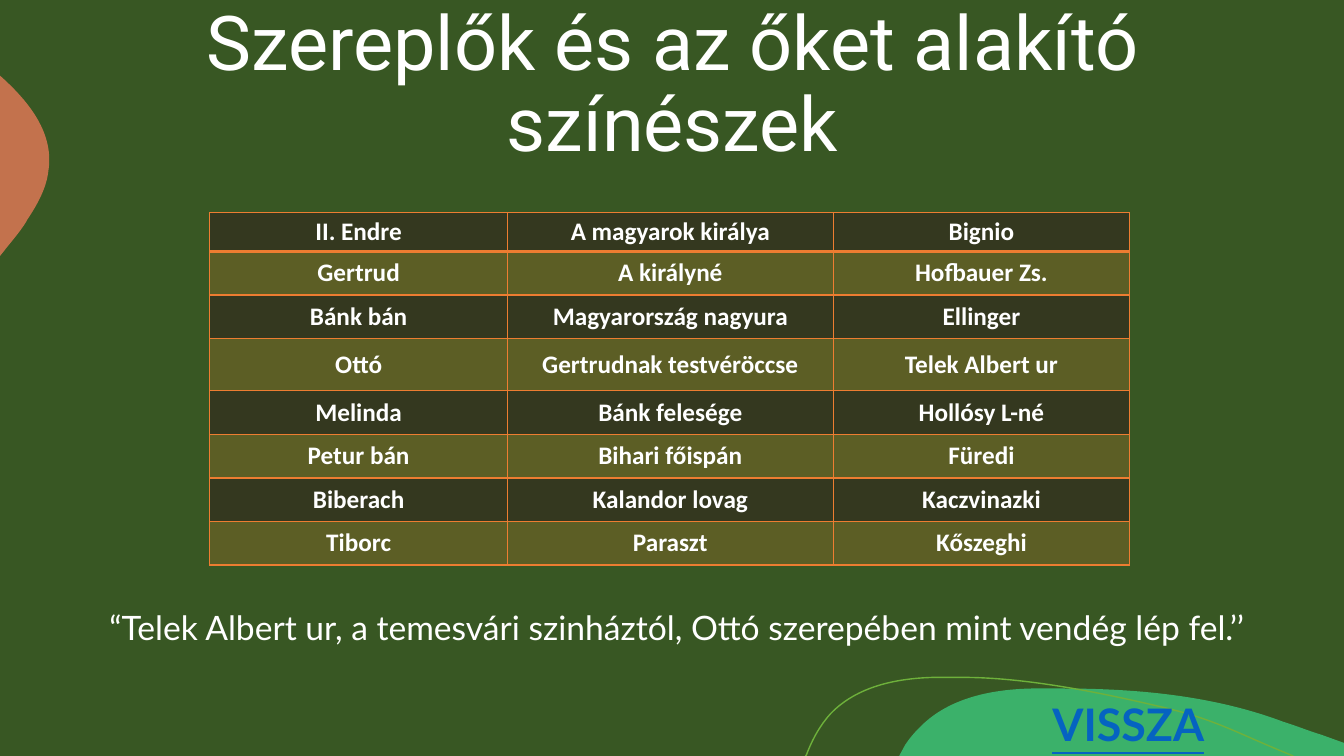
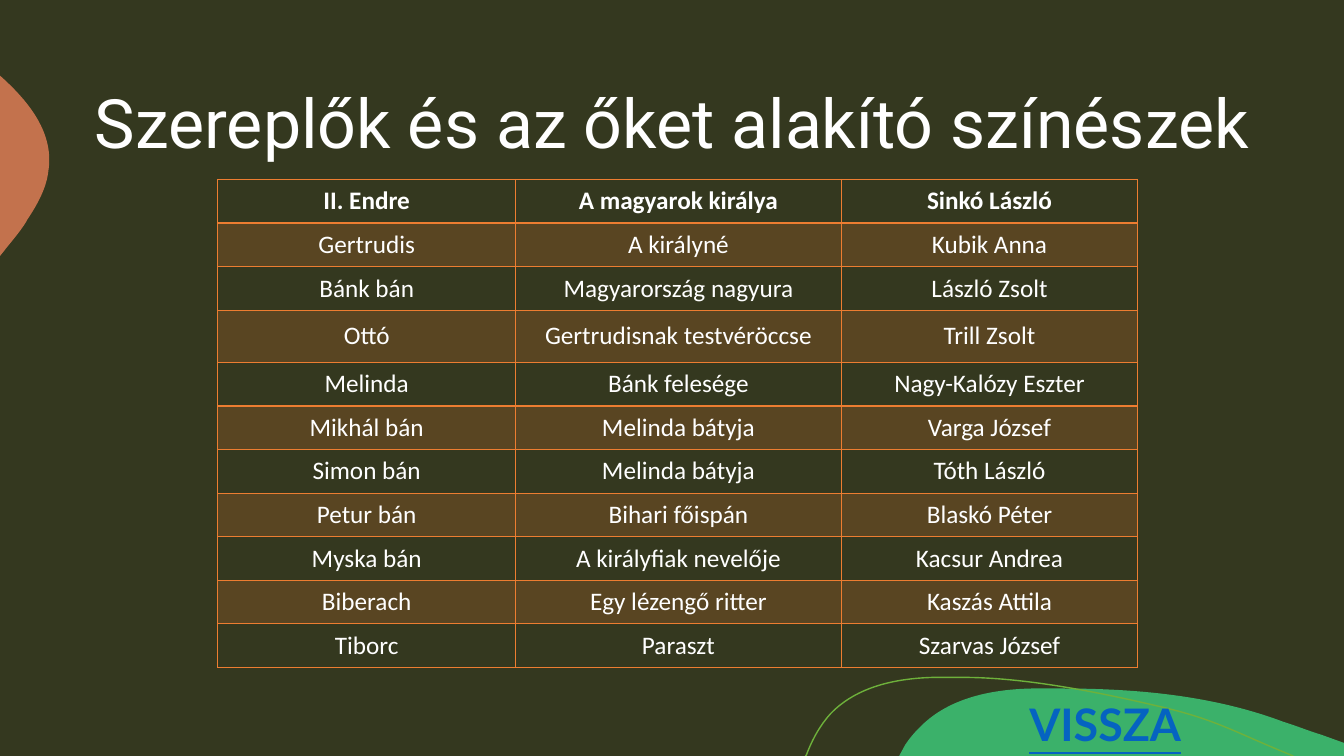
from dataclasses import dataclass
from typing import NamedTuple

from lxml.etree import SubElement
from pptx import Presentation
from pptx.dml.color import RGBColor
from pptx.enum.text import MSO_ANCHOR, MSO_AUTO_SIZE, PP_ALIGN
from pptx.oxml.ns import qn
from pptx.util import Emu, Inches, Pt

WIDTH, HEIGHT = Inches(13.33), Inches(7.5)
GREEN, DARK, ORANGE, WHITE = "385723", "34381F", "ED7D31", "FFFFFF"
LINK_BLUE = "0563C1"
TITLE = "Szereplők és az őket alakító színészek"
COLUMN_SHARES = (22.17, 24.22, 22.08)
ROW_SHARE, TALL_ROW_SHARE, TALL_ROW = 5.76, 6.93, 3
FIRST_BLOB_ID = 100


class Point(NamedTuple):
    x: float
    y: float


class Frame(NamedTuple):
    x: float
    y: float
    w: float
    h: float


@dataclass(frozen=True)
class Blob:
    start: Point
    width: float
    segments: tuple
    fill: str | None = None
    line: str | None = None


@dataclass(frozen=True)
class TextStyle:
    font: str
    size: float
    color: str = WHITE
    bold: bool = False
    underline: bool = False


@dataclass(frozen=True)
class CastSlide:
    background: str
    title_frame: Frame
    title_size: float
    table_origin: Point
    header_share: float
    bold_body: bool
    back_frame: Frame
    cast: tuple
    quote: str = ""


BLOBS = (
    Blob(Point(79.05, 91.07), 33.1, (
        ((84.6, 91.07), (90.3, 92), (95.48, 95.47)),
        ((96.45, 96), (97.35, 96.67), (98.33, 97.2)),
        ((100, 98.27),), ((100, 100),), ((66.9, 100),), ((67.35, 98.53),),
        ((67.65, 97.73), (67.95, 97.07), (68.33, 96.4)),
        ((70.43, 92.4), (73.65, 91.2), (76.73, 91.07)),
        ((77.48, 91.07), (78.23, 91.07), (79.05, 91.07)),
    ), fill="3BB16A"),
    Blob(Point(0, 10), 3.68, (
        ((0.08, 10.13),),
        ((2.25, 13.6), (4.05, 17.73), (3.6, 22.67)),
        ((3.45, 24.93), (2.78, 27.07), (2.03, 29.07)),
        ((1.8, 29.87), (1.28, 31.07), (0.6, 32.53)),
        ((0, 33.87),),
    ), fill="C3724D"),
    Blob(Point(59.93, 100), 36.3, (
        ((60, 99.87),),
        ((60.45, 97.73), (61.05, 95.87), (61.8, 94.4)),
        ((63.75, 90.8), (66.68, 89.73), (69.45, 89.6)),
        ((71.63, 89.6),),
        ((76.65, 89.6), (82.5, 91.87), (86.63, 93.6)),
        ((90.68, 95.33), (91.95, 96.93), (96.23, 100)),
    ), line="6EB13B"),
)

SLIDES = (
    CastSlide(
        GREEN, Frame(6.3, -1.07, 87.5, 24), 54, Point(15.6, 28.13), 5.13, True,
        Frame(77.57, 91.47, 13.05, 8.53),
        (
            ("II. Endre", "A magyarok királya", "Bignio"),
            ("Gertrud", "A királyné", "Hofbauer Zs."),
            ("Bánk bán", "Magyarország nagyura", "Ellinger"),
            ("Ottó", "Gertrudnak testvéröccse", "Telek Albert ur"),
            ("Melinda", "Bánk felesége", "Hollósy L-né"),
            ("Petur bán", "Bihari főispán", "Füredi"),
            ("Biberach", "Kalandor lovag", "Kaczvinazki"),
            ("Tiborc", "Paraszt", "Kőszeghi"),
        ),
        "“Telek Albert ur, a temesvári szinháztól, Ottó szerepében mint vendég lép fel.’’",
    ),
    CastSlide(
        DARK, Frame(6.25, 0, 87.5, 22.27), 48.6, Point(16.2, 23.75), ROW_SHARE, False,
        Frame(75.85, 91.47, 14.5, 8.53),
        (
            ("II. Endre", "A magyarok királya", "Sinkó László"),
            ("Gertrudis", "A királyné", "Kubik Anna"),
            ("Bánk bán", "Magyarország nagyura", "László Zsolt"),
            ("Ottó", "Gertrudisnak testvéröccse", "Trill Zsolt"),
            ("Melinda", "Bánk felesége", "Nagy-Kalózy Eszter"),
            ("Mikhál bán", "Melinda bátyja", "Varga József"),
            ("Simon bán", "Melinda bátyja", "Tóth László"),
            ("Petur bán", "Bihari főispán", "Blaskó Péter"),
            ("Myska bán", "A királyfiak nevelője", "Kacsur Andrea"),
            ("Biberach", "Egy lézengő ritter", "Kaszás Attila"),
            ("Tiborc", "Paraszt", "Szarvas József"),
        ),
    ),
)


def rgb(color: str) -> RGBColor:
    return RGBColor.from_string(color)


def across(share: float) -> Emu:
    return Emu(round(WIDTH * share / 100))


def down(share: float) -> Emu:
    return Emu(round(HEIGHT * share / 100))


def place(frame: Frame) -> tuple:
    return across(frame.x), down(frame.y), across(frame.w), down(frame.h)


def write(tf, text: str, style: TextStyle, align=PP_ALIGN.CENTER):
    tf.text = text
    p = tf.paragraphs[0]
    p.alignment = align
    font = p.font
    font.name, font.size = style.font, Pt(style.size)
    font.bold, font.underline = style.bold, style.underline
    font.color.rgb = rgb(style.color)
    return p


def bend(outline, segments: tuple) -> None:
    steps = iter(outline.findall(qn("a:lnTo")))
    for segment in segments:
        lines = [next(steps) for _ in segment]
        if len(lines) == 3:
            curve = outline.makeelement(qn("a:cubicBezTo"))
            lines[0].addprevious(curve)
            for line in lines:
                curve.append(line[0])
                outline.remove(line)


def draw_blob(s, blob: Blob):
    builder = s.shapes.build_freeform(across(blob.start.x), down(blob.start.y))
    points = [(across(x), down(y)) for segment in blob.segments for x, y in segment]
    builder.add_line_segments(points, close=blob.fill is not None)
    sp = builder.convert_to_shape()
    outline = next(sp.element.iter(qn("a:path")))
    bend(outline, blob.segments)
    sp.width = across(blob.width)
    outline.set("w", str(sp.width))
    sp.shadow.inherit = False
    if blob.fill:
        sp.fill.solid()
        sp.fill.fore_color.rgb = rgb(blob.fill)
    else:
        sp.fill.background()
    if blob.line:
        sp.line.color.rgb = rgb(blob.line)
        sp.line.width = Pt(1)
    else:
        sp.line.fill.background()
    return sp


def decorate_layout(s) -> None:
    for number, blob in enumerate(BLOBS, FIRST_BLOB_ID):
        sp = draw_blob(s, blob)
        next(sp.element.iter(qn("p:cNvPr"))).set("id", str(number))
        s.slide_layout.shapes.element.append(sp.element)


def draw_title(s, frame: Frame, size: float) -> None:
    sp = s.shapes.title
    sp.left, sp.top, sp.width, sp.height = place(frame)
    tf = sp.text_frame
    tf.word_wrap = True
    tf.auto_size = MSO_AUTO_SIZE.NONE
    tf.vertical_anchor = MSO_ANCHOR.BOTTOM
    write(tf, TITLE, TextStyle("Roboto", size)).line_spacing = 0.9


def add_text(s, frame: Frame, text: str, style: TextStyle, align):
    tf = s.shapes.add_textbox(*place(frame)).text_frame
    tf.word_wrap = True
    return write(tf, text, style, align)


def set_border(tcPr, side: str, width: float) -> None:
    ln = SubElement(tcPr, qn(f"a:ln{side}"), w=str(Pt(width)))
    SubElement(SubElement(ln, qn("a:solidFill")), qn("a:srgbClr"), val=ORANGE)


def format_cell(cell, row: int) -> None:
    cell.vertical_anchor = MSO_ANCHOR.MIDDLE
    cell.margin_left = cell.margin_right = across(0.6)
    cell.margin_top = cell.margin_bottom = down(0.53)
    tcPr = cell._tc.get_or_add_tcPr()
    for side in "LRTB":
        under_header = (row, side) in ((0, "B"), (1, "T"))
        set_border(tcPr, side, 2 if under_header else 1)
    banded = row % 2 == 1
    cell.fill.solid()
    cell.fill.fore_color.rgb = rgb(ORANGE if banded else DARK)
    if banded:
        color = tcPr.find(qn("a:solidFill")).find(qn("a:srgbClr"))
        SubElement(color, qn("a:alpha"), val="20000")


def draw_cast(s, data: CastSlide) -> None:
    heights = [ROW_SHARE] * len(data.cast)
    heights[0], heights[TALL_ROW] = data.header_share, TALL_ROW_SHARE
    frame = Frame(*data.table_origin, sum(COLUMN_SHARES), sum(heights))
    table = s.shapes.add_table(len(heights), len(COLUMN_SHARES), *place(frame)).table
    table.first_row = table.horz_banding = False
    for column, share in zip(table.columns, COLUMN_SHARES):
        column.width = across(share)
    for row, (share, names) in enumerate(zip(heights, data.cast)):
        table.rows[row].height = down(share)
        style = TextStyle("Calibri", 18, bold=row == 0 or data.bold_body)
        for col, name in enumerate(names):
            cell = table.cell(row, col)
            format_cell(cell, row)
            write(cell.text_frame, name, style)


def draw_slide(s, data: CastSlide) -> None:
    s.background.fill.solid()
    s.background.fill.fore_color.rgb = rgb(data.background)
    draw_title(s, data.title_frame, data.title_size)
    draw_cast(s, data)
    if data.quote:
        p = add_text(s, Frame(6.6, 78.3, 87.5, 21.7), data.quote,
                     TextStyle("Lato", 24), PP_ALIGN.CENTER)
        p.line_spacing, p.space_before = 1.25, Pt(10)
    add_text(s, data.back_frame, "VISSZA",
             TextStyle("Lato", 32, LINK_BLUE, bold=True, underline=True), PP_ALIGN.LEFT)


def main() -> None:
    prs = Presentation()
    prs.slide_width, prs.slide_height = WIDTH, HEIGHT
    slides = [prs.slides.add_slide(prs.slide_layouts[5]) for _ in SLIDES]
    decorate_layout(slides[0])
    for s, data in zip(slides, SLIDES):
        draw_slide(s, data)
    prs.save("out.pptx")


if __name__ == "__main__":
    main()
